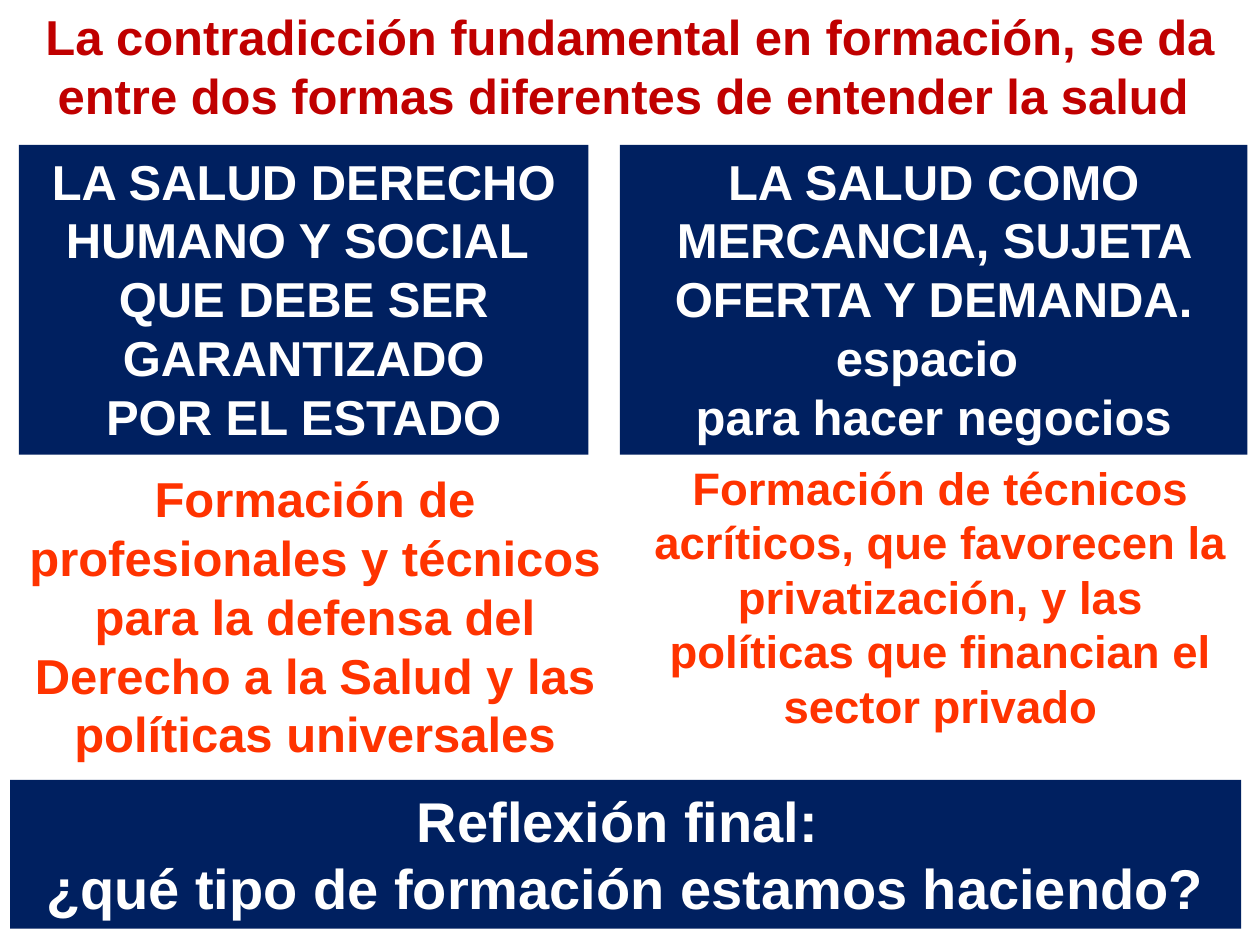
from dataclasses import dataclass

from pptx import Presentation
from pptx.dml.color import RGBColor
from pptx.enum.shapes import MSO_SHAPE
from pptx.enum.text import MSO_ANCHOR, MSO_AUTO_SIZE, PP_ALIGN
from pptx.util import Inches, Pt

RECT = MSO_SHAPE.RECTANGLE
TOP = MSO_ANCHOR.TOP
NO_FIT = MSO_AUTO_SIZE.NONE
CENTER = PP_ALIGN.CENTER
NAVY, RED, ORANGE, WHITE = "002060", "C00000", "FF3300", "FFFFFF"


@dataclass
class Block:
    left: float
    top: float
    width: float
    height: float
    lines: list[str]
    size: int = 28
    color: str = WHITE
    fill: str | None = None


def rgb(code: str) -> RGBColor:
    return RGBColor.from_string(code)


def write(shape, block: Block) -> None:
    frame = shape.text_frame
    frame.word_wrap = True
    frame.auto_size = NO_FIT
    frame.vertical_anchor = TOP
    for i, line in enumerate(block.lines):
        para = frame.paragraphs[0] if i == 0 else frame.add_paragraph()
        para.alignment = CENTER
        run = para.add_run()
        run.text = line
        font = run.font
        font.name = "Arial"
        font.size = Pt(block.size)
        font.bold = True
        font.color.rgb = rgb(block.color)


def draw(slide, block: Block) -> None:
    box = [Inches(n) for n in (block.left, block.top, block.width, block.height)]
    if block.fill:
        shape = slide.shapes.add_shape(RECT, *box)
        shape.shadow.inherit = False
        shape.fill.solid()
        shape.fill.fore_color.rgb = rgb(block.fill)
        shape.line.fill.background()
    else:
        shape = slide.shapes.add_textbox(*box)
    write(shape, block)


def head(slide, block: Block) -> None:
    title = slide.shapes.title
    title.left, title.top = Inches(block.left), Inches(block.top)
    title.width, title.height = Inches(block.width), Inches(block.height)
    write(title, block)


TITLE = Block(0, 0, 10, 1.04, [
    "La contradicción fundamental en formación, se da entre dos formas "
    "diferentes de entender la salud "], color=RED)

BLOCKS = [
    Block(4.92, 1.15, 4.98, 2.46, [
        "LA SALUD COMO MERCANCIA, SUJETA OFERTA Y DEMANDA.",
        "espacio ",
        "para hacer negocios"], fill=NAVY),
    Block(5.08, 3.6, 4.77, 2.29, [
        "Formación de técnicos acríticos, que favorecen la privatización, "
        "y las políticas que financian el sector privado"], 26, ORANGE),
    Block(0.15, 1.15, 4.52, 2.46, [
        "LA SALUD DERECHO HUMANO Y SOCIAL ",
        "QUE DEBE SER GARANTIZADO",
        "POR EL ESTADO"], fill=NAVY),
    Block(0.08, 3.67, 4.84, 2.46, [
        "Formación de profesionales y técnicos para la defensa del "
        "Derecho a la Salud y las políticas universales"], color=ORANGE),
    Block(0.08, 6.19, 9.77, 1.18, [
        "Reflexión final: ",
        "¿qué tipo de formación estamos haciendo?"], 32, fill=NAVY),
]


def main() -> None:
    deck = Presentation()
    deck.slide_width, deck.slide_height = Inches(10), Inches(7.5)
    slide = deck.slides.add_slide(deck.slide_layouts[5])
    head(slide, TITLE)
    for block in BLOCKS:
        draw(slide, block)
    deck.save("out.pptx")


if __name__ == "__main__":
    main()
